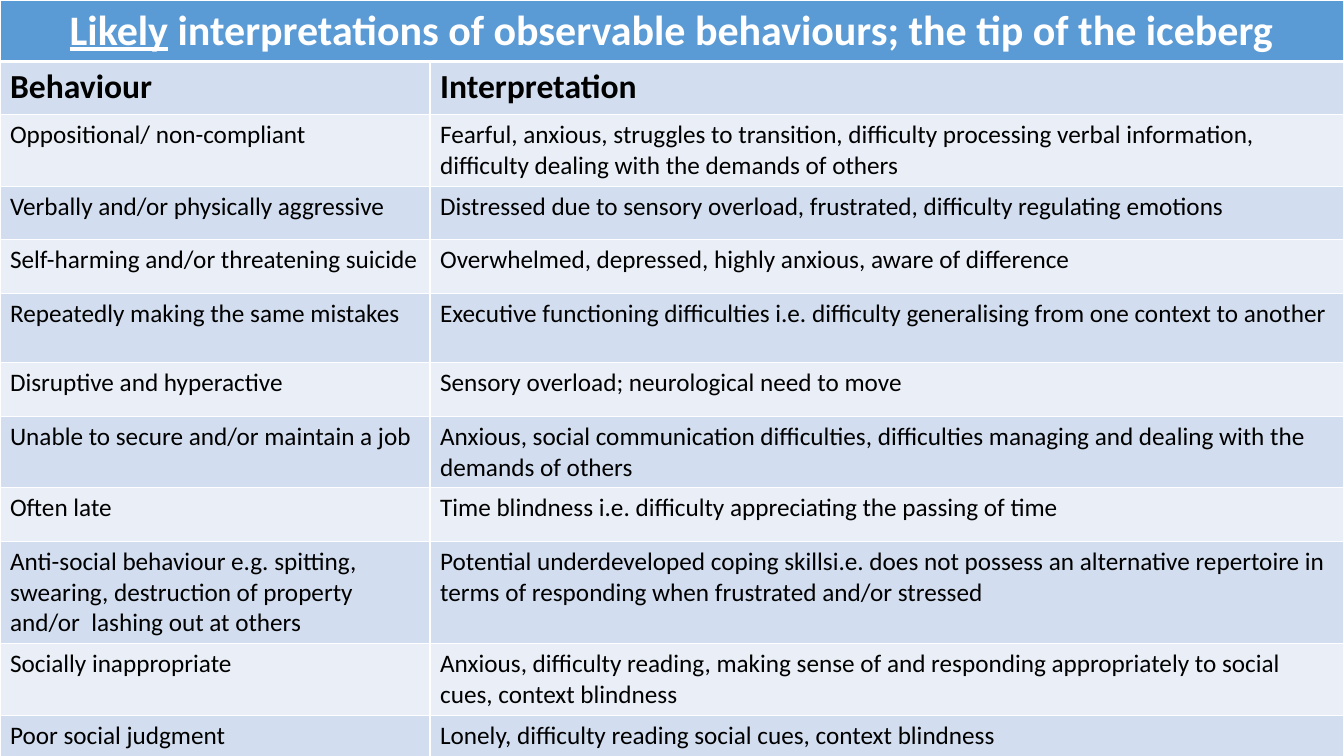
from lxml import etree
from pptx import Presentation
from pptx.dml.color import RGBColor
from pptx.enum.text import PP_ALIGN
from pptx.oxml.ns import qn
from pptx.util import Inches, Pt

CENTER = PP_ALIGN.CENTER
LEFT = PP_ALIGN.LEFT
WIDTH, HEIGHT = 13.33, 7.5
COLUMN_SHARES = [0.32, 0.68]
ROW_HEIGHTS = [0.46, 0.53, 0.54, 0.53, 0.53, 0.69, 0.53, 0.53, 0.53, 0.99, 0.69, 0.53]
FONT = "Calibri"
BLACK, WHITE = "000000", "FFFFFF"
TITLE_FILL = "5B9BD5"
BANDS = ["EAEFF7", "D2DEEF"]

TITLE = ["Likely", " interpretations of observable behaviours; the tip of the iceberg"]
ROWS = [
    ("Behaviour", "Interpretation"),
    ("Oppositional/ non-compliant",
     "Fearful, anxious, struggles to transition, difficulty processing verbal information, "
     "difficulty dealing with the demands of others"),
    ("Verbally and/or physically aggressive",
     "Distressed due to sensory overload, frustrated, difficulty regulating emotions"),
    ("Self-harming and/or threatening suicide",
     "Overwhelmed, depressed, highly anxious, aware of difference"),
    ("Repeatedly making the same mistakes",
     "Executive functioning difficulties i.e. difficulty generalising from one context to another"),
    ("Disruptive and hyperactive",
     "Sensory overload; neurological need to move"),
    ("Unable to secure and/or maintain a job",
     "Anxious, social communication difficulties, difficulties managing and dealing with the "
     "demands of others"),
    ("Often late",
     "Time blindness i.e. difficulty appreciating the passing of time"),
    ("Anti-social behaviour e.g. spitting, swearing, destruction of property "
     "and/or  lashing out at others",
     "Potential underdeveloped coping skillsi.e. does not possess an alternative repertoire in "
     "terms of responding when frustrated and/or stressed"),
    ("Socially inappropriate",
     "Anxious, difficulty reading, making sense of and responding appropriately to social cues, "
     "context blindness"),
    ("Poor social judgment",
     "Lonely, difficulty reading social cues, context blindness"),
]


def rgb(color):
    return RGBColor.from_string(color)


def set_borders(cell, top=1, bottom=1):
    tcPr = cell._tc.get_or_add_tcPr()
    for side, width in (("L", 1), ("R", 1), ("T", top), ("B", bottom)):
        ln = etree.SubElement(tcPr, qn(f"a:ln{side}"), w=str(Pt(width)))
        fill = etree.SubElement(ln, qn("a:solidFill"))
        etree.SubElement(fill, qn("a:srgbClr"), val=WHITE)


def set_fill(cell, color):
    cell.fill.solid()
    cell.fill.fore_color.rgb = rgb(color)


def write_cell(cell, texts, size, color, bold, align=LEFT):
    p = cell.text_frame.paragraphs[0]
    p.alignment = align
    for text in texts:
        r = p.add_run()
        r.text = text
        r.font.name = FONT
        r.font.size = Pt(size)
        r.font.bold = bold
        r.font.color.rgb = rgb(color)
    return p


def add_grid(slide):
    frame = slide.shapes.add_table(len(ROW_HEIGHTS), len(COLUMN_SHARES), 0, 0,
                                   Inches(WIDTH), Inches(sum(ROW_HEIGHTS)))
    table = frame.table
    table.first_row = False
    table.horz_banding = False
    for column, share in zip(table.columns, COLUMN_SHARES):
        column.width = Inches(WIDTH * share)
    for row, height in zip(table.rows, ROW_HEIGHTS):
        row.height = Inches(height)
    return table


def fill_title(table):
    for cell in table.rows[0].cells:
        set_borders(cell, bottom=3)
        set_fill(cell, TITLE_FILL)
    title = table.cell(0, 0)
    title.merge(table.cell(0, 1))
    p = write_cell(title, TITLE, 30, WHITE, True, CENTER)
    p.runs[0].font.underline = True


def fill_rows(table):
    for i, texts in enumerate(ROWS, start=1):
        heading = i == 1
        for cell, text in zip(table.rows[i].cells, texts):
            set_borders(cell, top=3 if heading else 1)
            set_fill(cell, BANDS[i % 2])
            write_cell(cell, [text], 24 if heading else 18, BLACK, heading)


def main():
    prs = Presentation()
    prs.slide_width, prs.slide_height = Inches(WIDTH), Inches(HEIGHT)
    slide = prs.slides.add_slide(prs.slide_layouts[6])
    table = add_grid(slide)
    fill_title(table)
    fill_rows(table)
    prs.save("out.pptx")


if __name__ == "__main__":
    main()
